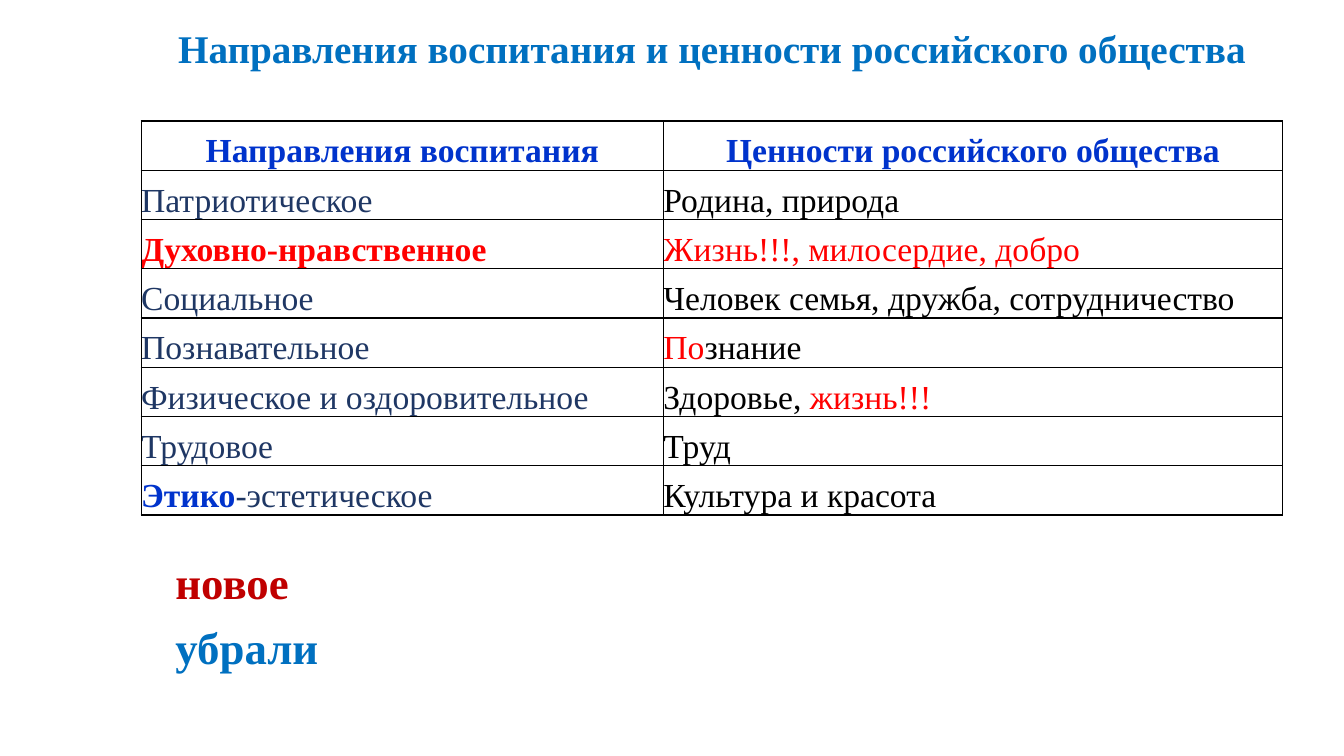
import pptx
import pptx.util
import pptx.dml.color
import pptx.enum.text
import pptx.oxml
import pptx.oxml.ns

Inches = pptx.util.Inches
Pt = pptx.util.Pt
ALIGN = pptx.enum.text.PP_ALIGN
ANCHOR = pptx.enum.text.MSO_ANCHOR

FACE = "Times New Roman"
BLACK, RED, NAVY, BLUE = "000000", "FF0000", "1F3764", "0033CC"
SKY, WINE = "0070C0", "C00000"

HEADS = ["Направления воспитания", "Ценности российского общества"]
ROWS = [
    ([("Патриотическое", NAVY, False)], [("Родина, природа", BLACK, False)]),
    ([("Духовно-нравственное", RED, True)],
     [("Жизнь!!!, милосердие, добро", RED, False)]),
    ([("Социальное", NAVY, False)],
     [("Человек семья, дружба, сотрудничество", BLACK, False)]),
    ([("Познавательное", NAVY, False)],
     [("По", RED, False), ("знание", BLACK, False)]),
    ([("Физическое и оздоровительное", NAVY, False)],
     [("Здоровье, ", BLACK, False), ("жизнь!!!", RED, False)]),
    ([("Трудовое", NAVY, False)], [("Труд", BLACK, False)]),
    ([("Этико", BLUE, True), ("-эстетическое", NAVY, False)],
     [("Культура и красота", BLACK, False)]),
]


def color(code):
    """Turn a hex string into a colour."""
    return pptx.dml.color.RGBColor.from_string(code)


def style(run, size, code, bold):
    """Format one run."""
    run.font.name = FACE
    run.font.size = Pt(size)
    run.font.bold = bold
    run.font.color.rgb = color(code)


def label(slide, box, text, size, code, align=ALIGN.LEFT):
    """Place one bold line of text in the box."""
    frame = slide.shapes.add_textbox(*map(Inches, box)).text_frame
    frame.word_wrap = True
    frame.margin_left = frame.margin_right = 0
    frame.margin_top = frame.margin_bottom = 0
    frame.text = text
    line = frame.paragraphs[0]
    line.alignment = align
    style(line.runs[0], size, code, True)


def border(cell, code):
    """Draw a thin line on each side of the cell."""
    props = cell._tc.get_or_add_tcPr()
    space = pptx.oxml.ns.nsdecls("a")
    for spot, side in enumerate("LRTB"):
        props.insert(spot, pptx.oxml.parse_xml(
            f'<a:ln{side} {space} w="{Pt(1)}"><a:solidFill>'
            f'<a:srgbClr val="{code}"/></a:solidFill></a:ln{side}>'))


def fill(cell, parts, align):
    """Write coloured parts into a cell and frame it."""
    cell.margin_left = cell.margin_right = 0
    cell.margin_top = cell.margin_bottom = 0
    cell.vertical_anchor = ANCHOR.BOTTOM
    cell.fill.background()
    border(cell, BLACK)
    line = cell.text_frame.paragraphs[0]
    line.alignment = align
    for text, code, bold in parts:
        run = line.add_run()
        run.text = text
        style(run, 24, code, bold)


def grid(slide, box):
    """Place the table of directions and values in the box."""
    left, top, width, height = box
    count = len(ROWS) + 1
    table = slide.shapes.add_table(count, 2, *map(Inches, box)).table
    table.horz_banding = False
    table.columns[0].width = Inches(5.18)
    table.columns[1].width = Inches(width - 5.18)
    for row in table.rows:
        row.height = Inches(height / count)
    for col, head in enumerate(HEADS):
        fill(table.cell(0, col), [(head, BLUE, True)], ALIGN.CENTER)
    for row, pair in enumerate(ROWS, 1):
        for col, parts in enumerate(pair):
            fill(table.cell(row, col), parts, ALIGN.LEFT)


def legend(slide, box):
    """Stack the two marks in the box."""
    left, top, width, height = box
    step = height / 2
    for row, (text, code) in enumerate([("новое", WINE), ("убрали", SKY)]):
        label(slide, (left, top + row * step, width, 0.5), text, 32, code)


def main():
    """Build and save the slide."""
    deck = pptx.Presentation()
    deck.slide_width, deck.slide_height = Inches(13.33), Inches(7.5)
    slide = deck.slides.add_slide(deck.slide_layouts[6])
    label(slide, (1.4, 0.24, 11.32, 0.58),
          "Направления воспитания и ценности российского общества",
          28, SKY, ALIGN.CENTER)
    grid(slide, (1.4, 1.2, 11.32, 3.91))
    legend(slide, (1.74, 5.5, 1.6, 1.3))
    deck.save("out.pptx")


if __name__ == "__main__":
    main()
